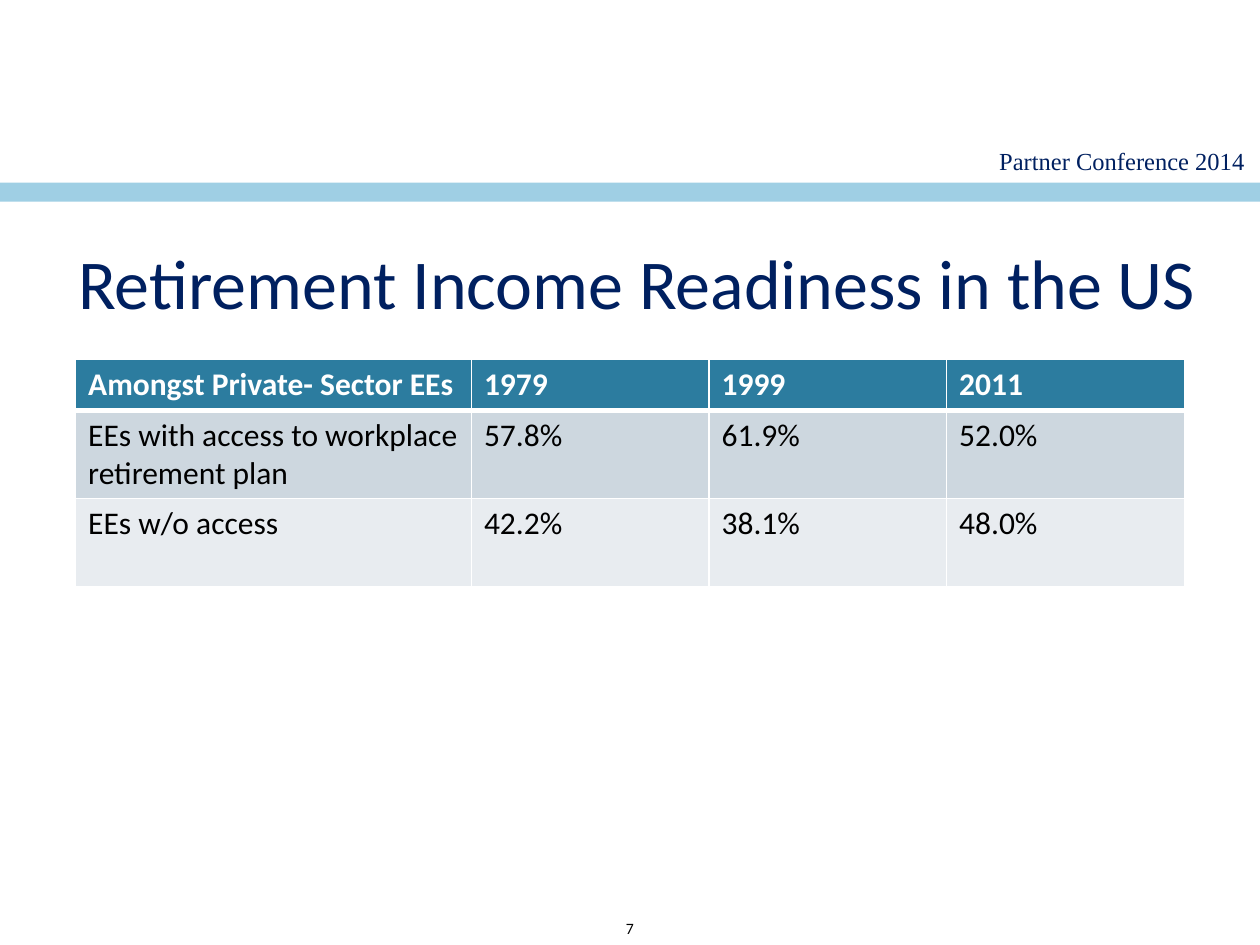
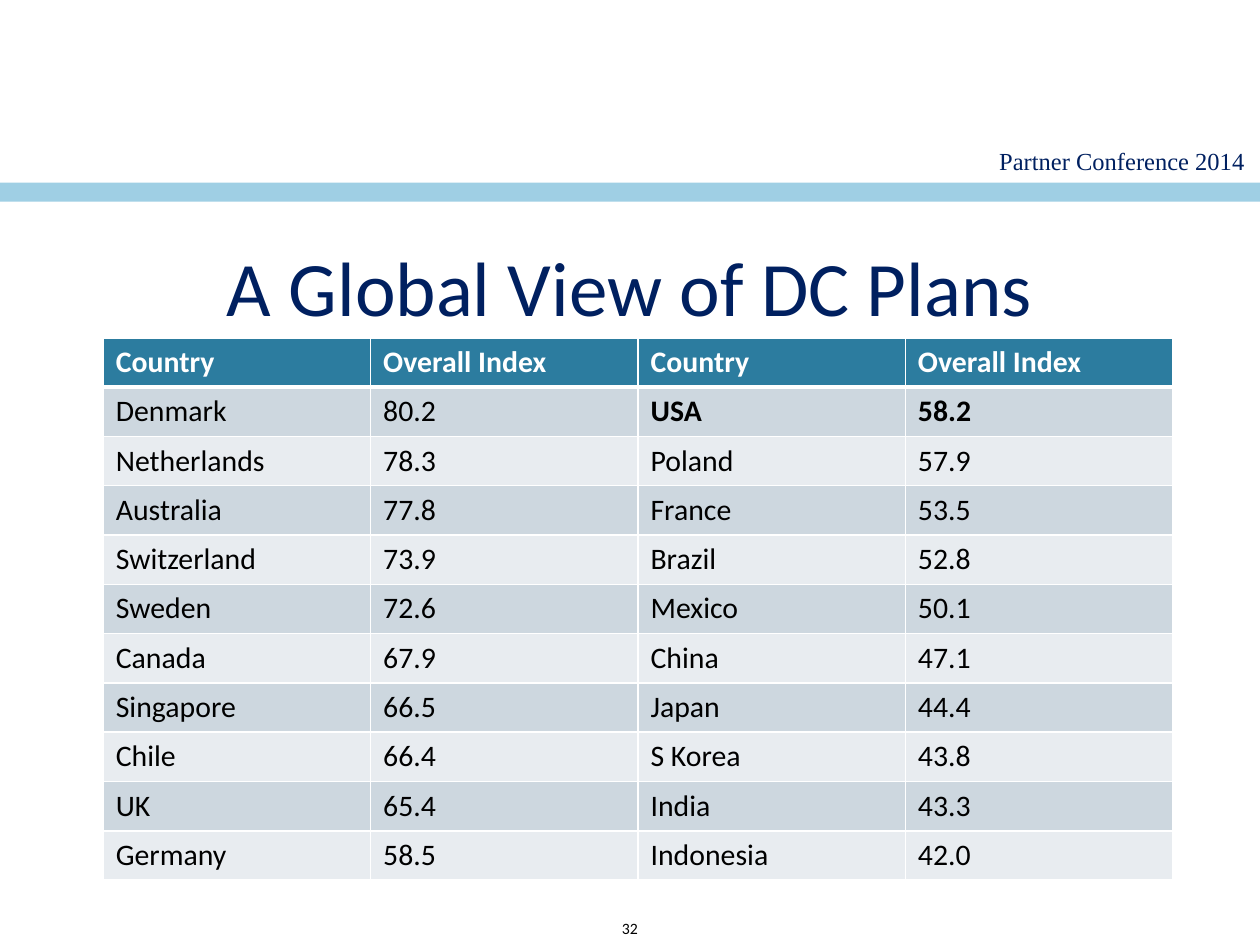
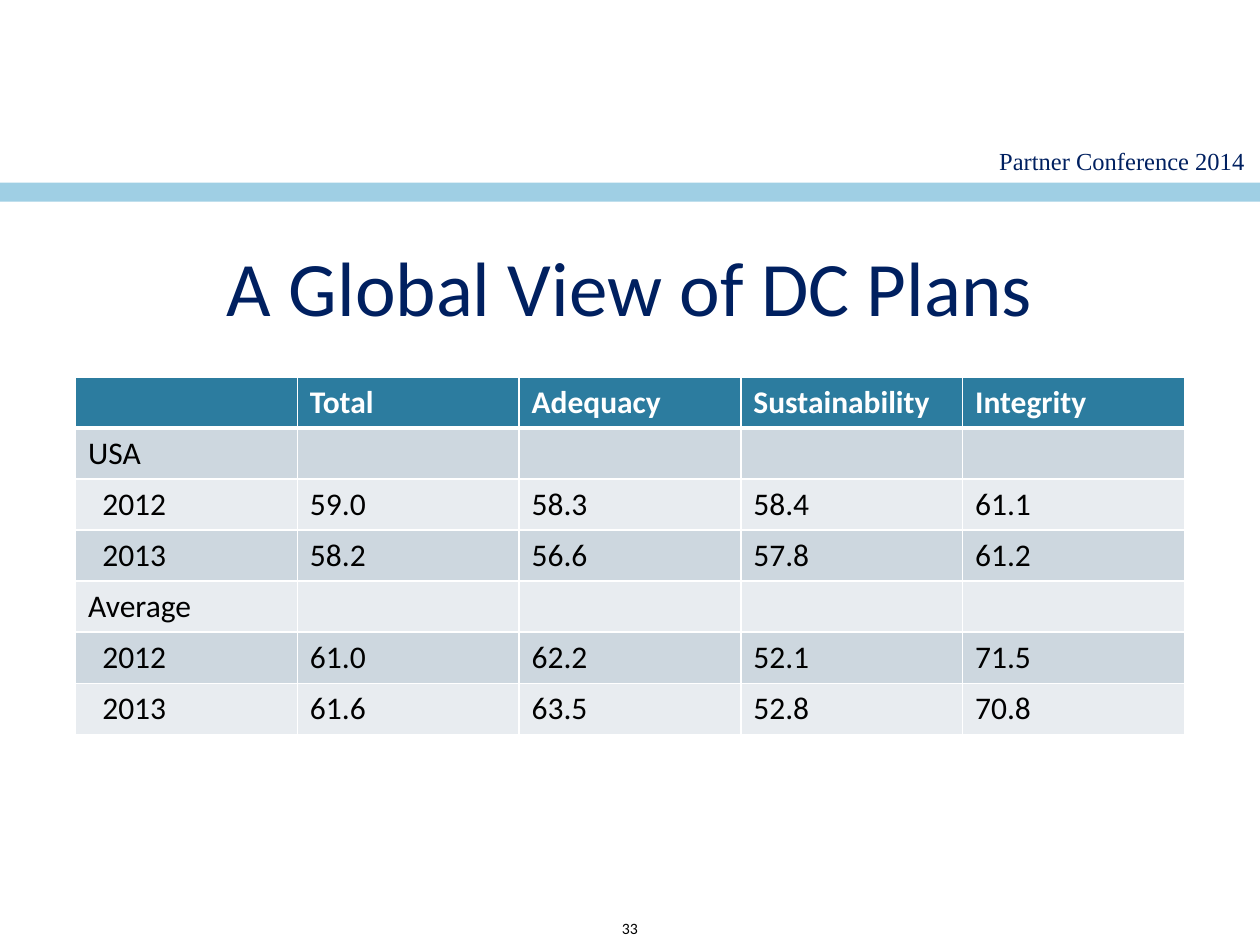
"""Build three slides on retirement income and pension plans."""
from dataclasses import dataclass

from lxml import etree
from pptx import Presentation
from pptx import util as u
from pptx.dml.color import RGBColor
from pptx.enum import shapes, text
from pptx.oxml import ns


@dataclass(frozen=True)
class Theme:
    navy: str = "002060"
    sky: str = "9FCFE4"
    teal: str = "2C7C9F"
    dark: str = "CDD7DF"
    light: str = "E8ECF0"
    white: str = "FFFFFF"
    black: str = "000000"
    sans: str = "Calibri"
    serif: str = "Times New Roman"
    title: float = 44
    body: float = 18
    event: float = 14
    foot: float = 9
    thin: float = 1
    thick: float = 3
    inset: float = 7.2
    indent: float = 8.1


class Deck:
    def __init__(self, theme):
        self.theme = theme
        self.show = Presentation()
        self.show.slide_width = u.Pt(720)
        self.show.slide_height = u.Pt(540)
        self.slide = None

    def page(self, number):
        t = self.theme
        self.slide = self.show.slides.add_slide(self.show.slide_layouts[6])
        self.label("Partner Conference 2014", (544.3, 79.9, 193.7, 24.5), t.event, t.navy, t.serif)
        self.band((0, 104.4, 720, 10.8), t.sky)
        self.label(str(number), (0, 521.3, 720, 18), t.foot, t.black, t.sans)

    def style(self, para, size, color, face, bold=False):
        for run in para.runs:
            run.font.size = u.Pt(size)
            run.font.name = face
            run.font.bold = bold
            run.font.color.rgb = RGBColor.from_string(color)

    def label(self, words, area, size, color, face, anchor=text.MSO_ANCHOR.TOP):
        frame = self.slide.shapes.add_textbox(*map(u.Pt, area)).text_frame
        frame.word_wrap = True
        frame.vertical_anchor = anchor
        frame.text = words
        para = frame.paragraphs[0]
        para.alignment = text.PP_ALIGN.CENTER
        self.style(para, size, color, face)

    def title(self, words, area=(43.2, 126, 633.6, 67), size=None):
        t = self.theme
        self.label(words, area, size or t.title, t.navy, t.sans, text.MSO_ANCHOR.BOTTOM)

    def band(self, area, color):
        bar = self.slide.shapes.add_shape(shapes.MSO_SHAPE.RECTANGLE, *map(u.Pt, area))
        bar.shadow.inherit = False
        bar.fill.solid()
        bar.fill.fore_color.rgb = RGBColor.from_string(color)
        bar.line.fill.background()

    def border(self, cell, side, width):
        props = cell._tc.get_or_add_tcPr()
        line = etree.SubElement(props, ns.qn("a:ln" + side), w=str(u.Pt(width)))
        fill = etree.SubElement(line, ns.qn("a:solidFill"))
        etree.SubElement(fill, ns.qn("a:srgbClr"), val=self.theme.white)

    def table(self, rows, left, top, widths, heights, size=None, strong=(), nested=()):
        t = self.theme
        area = (left, top, sum(widths), sum(heights))
        grid = self.slide.shapes.add_table(len(rows), len(widths), *map(u.Pt, area)).table
        for col, width in zip(grid.columns, widths):
            col.width = u.Pt(width)
        for r, (row, height) in enumerate(zip(rows, heights)):
            grid.rows[r].height = u.Pt(height)
            head = r == 0
            shade = t.teal if head else t.dark if r % 2 else t.light
            for c, words in enumerate(row):
                cell = grid.cell(r, c)
                for side in "LR":
                    self.border(cell, side, t.thin)
                self.border(cell, "T", t.thick if r == 1 else t.thin)
                self.border(cell, "B", t.thick if head else t.thin)
                cell.fill.solid()
                cell.fill.fore_color.rgb = RGBColor.from_string(shade)
                if (r, c) in nested:
                    cell.margin_left = u.Pt(t.inset + t.indent)
                cell.text_frame.text = words
                self.style(cell.text_frame.paragraphs[0], size or t.body,
                           t.white if head else t.black, t.sans, head or (r, c) in strong)

    def save(self):
        self.show.save("out.pptx")


ACCESS = [
    ("Amongst Private- Sector EEs", "1979", "1999", "2011"),
    ("EEs with access to workplace retirement plan", "57.8%", "61.9%", "52.0%"),
    ("EEs w/o access", "42.2%", "38.1%", "48.0%"),
]
RANKS = [
    ("Country", "Overall Index", "Country", "Overall Index"),
    ("Denmark", "80.2", "USA", "58.2"),
    ("Netherlands", "78.3", "Poland", "57.9"),
    ("Australia", "77.8", "France", "53.5"),
    ("Switzerland", "73.9", "Brazil", "52.8"),
    ("Sweden", "72.6", "Mexico", "50.1"),
    ("Canada", "67.9", "China", "47.1"),
    ("Singapore", "66.5", "Japan", "44.4"),
    ("Chile", "66.4", "S Korea", "43.8"),
    ("UK", "65.4", "India", "43.3"),
    ("Germany", "58.5", "Indonesia", "42.0"),
]
SCORES = [
    ("", "Total", "Adequacy", "Sustainability", "Integrity"),
    ("USA", "", "", "", ""),
    ("2012", "59.0", "58.3", "58.4", "61.1"),
    ("2013", "58.2", "56.6", "57.8", "61.2"),
    ("Average", "", "", "", ""),
    ("2012", "61.0", "62.2", "52.1", "71.5"),
    ("2013", "61.6", "63.5", "52.8", "70.8"),
]


def main():
    deck = Deck(Theme())

    deck.page(7)
    deck.title("Retirement Income Readiness in the US", (15.1, 121.7, 697.7, 67), 40)
    deck.table(ACCESS, 43.2, 205.2, [226.2] + [135.8] * 3, [29.2, 50.4, 50.4])

    deck.page(32)
    deck.title("A Global View of DC Plans")
    deck.table(RANKS, 59, 193, [152.8] * 4, [28.2] * len(RANKS), 17,
               strong={(1, 2), (1, 3)})

    deck.page(33)
    deck.title("A Global View of DC Plans")
    deck.table(SCORES, 43.2, 215.3, [126.72] * 5, [29.2] * len(SCORES),
               nested={(r, 0) for r in (2, 3, 5, 6)})

    deck.save()


if __name__ == "__main__":
    main()
